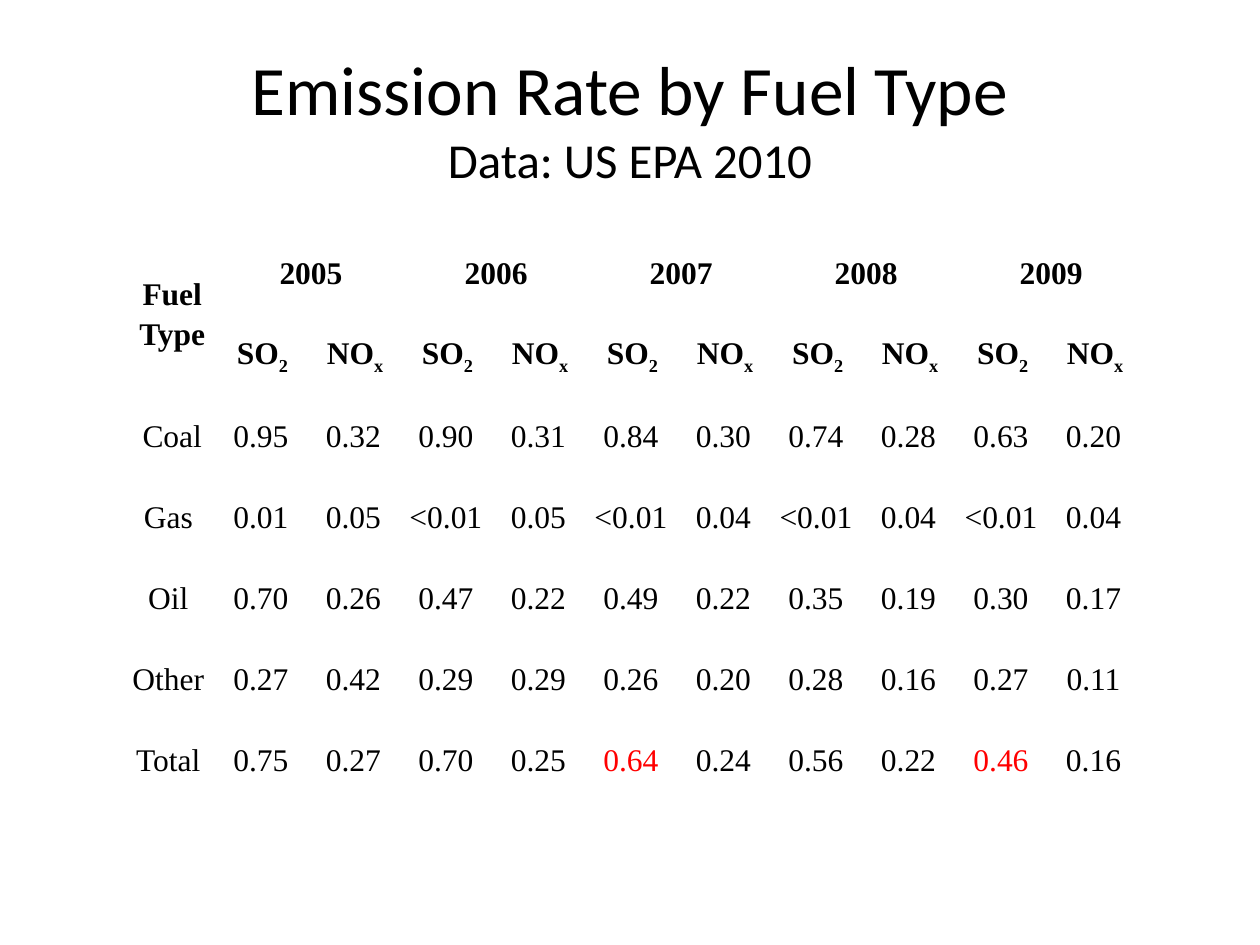
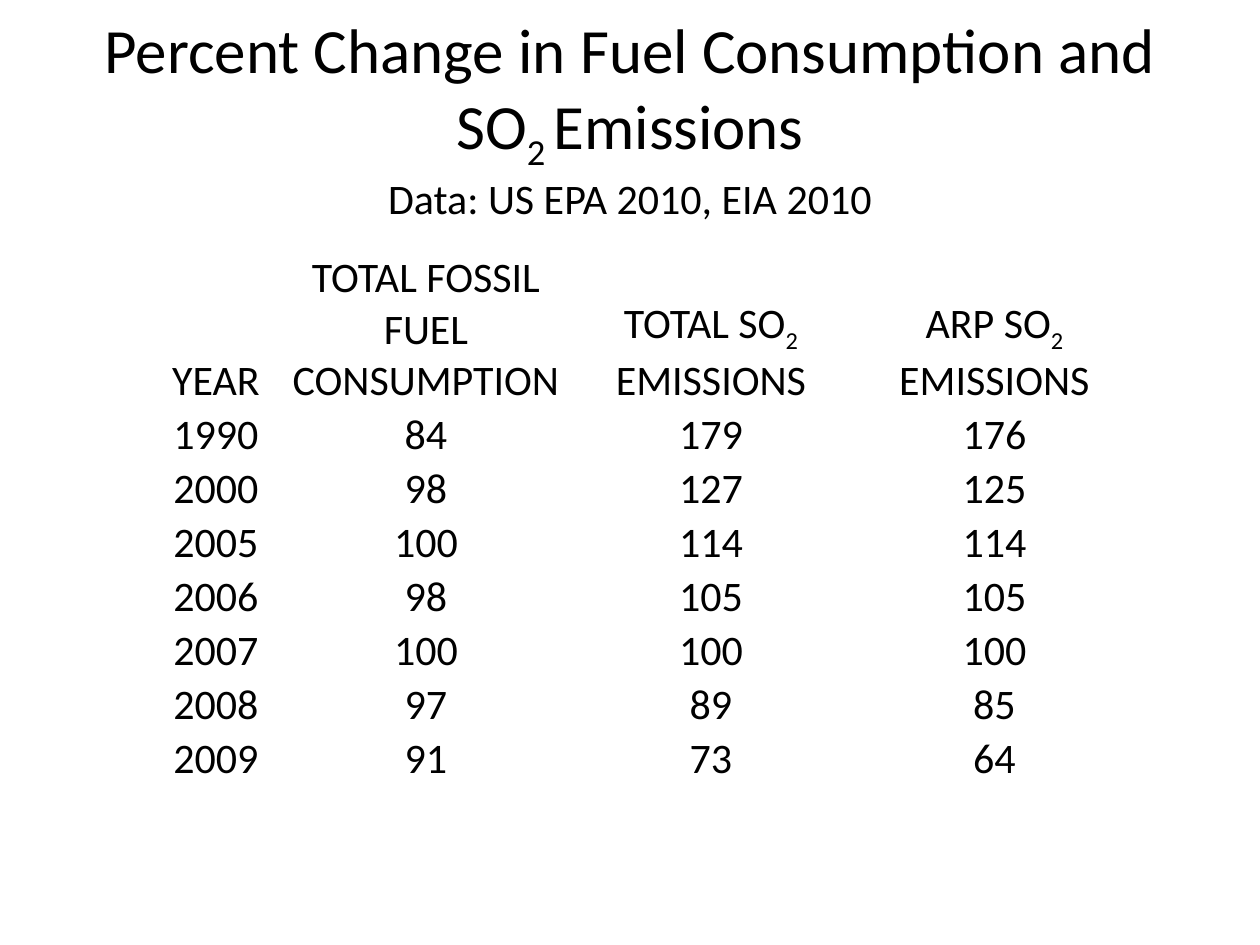
from lxml.etree import SubElement
from pptx import Presentation
from pptx.dml.color import RGBColor
from pptx.enum.text import MSO_ANCHOR, MSO_AUTO_SIZE, PP_ALIGN
from pptx.oxml.ns import qn
from pptx.util import Emu, Pt

COLORS = {"text": "000000", "alert": "FF0000"}
SANS, SERIF = "Calibri", "Times New Roman"
PAGE = (1260, 945)
TITLE = (63, 38, 1134, 158)

YEARS = ["2005", "2006", "2007", "2008", "2009"]
RATES = {
    "Coal": "0.95 0.32 0.90 0.31 0.84 0.30 0.74 0.28 0.63 0.20",
    "Gas ": "0.01 0.05 <0.01 0.05 <0.01 0.04 <0.01 0.04 <0.01 0.04",
    "Oil ": "0.70 0.26 0.47 0.22 0.49 0.22 0.35 0.19 0.30 0.17",
    "Other ": "0.27 0.42 0.29 0.29 0.26 0.20 0.28 0.16 0.27 0.11",
    "Total ": "0.75 0.27 0.70 0.25 0.64 0.24 0.56 0.22 0.46 0.16",
}
ALERTS = {(6, 5), (6, 9)}
HEADS = ["YEAR", "", "TOTAL FOSSIL FUEL CONSUMPTION",
         "TOTAL SO_2_ EMISSIONS", "ARP SO_2_ EMISSIONS"]
CHANGES = [
    (1990, 84, 179, 176),
    (2000, 98, 127, 125),
    (2005, 100, 114, 114),
    (2006, 98, 105, 105),
    (2007, 100, 100, 100),
    (2008, 97, 89, 85),
    (2009, 91, 73, 64),
]


def px(num):
    """Turn pixels into EMU."""
    return Emu(round(num * 914400 / 126))


def write(para, text, size, face=SANS, bold=False, color="text"):
    """Add runs to a centred paragraph; text between underscores is subscript."""
    para.alignment = PP_ALIGN.CENTER
    for idx, part in enumerate(text.split("_")):
        if not part:
            continue
        run = para.add_run()
        run.text = part
        font = run.font
        font.name, font.size, font.bold = face, Pt(size), bold
        font.color.rgb = RGBColor.from_string(COLORS[color])
        if idx % 2:
            run._r.get_or_add_rPr().set("baseline", "-25000")


def start(deck, box, head, size, note, small):
    """Add a slide whose title has a heading line and a smaller source line."""
    slide = deck.slides.add_slide(deck.slide_layouts[5])
    title = slide.shapes.title
    title.left, title.top, title.width, title.height = map(px, box)
    frame = title.text_frame
    frame.auto_size = MSO_AUTO_SIZE.NONE
    frame.vertical_anchor = MSO_ANCHOR.MIDDLE
    para = frame.paragraphs[0]
    write(para, head, size)
    para.add_line_break()
    SubElement(para._p[-1], qn("a:rPr"), sz=str(round(size * 100)))
    write(para, note, small)
    return slide


def grid(slide, box, cols, rows, anchor, foot):
    """Add a plain table with the given column widths and row heights."""
    table = slide.shapes.add_table(len(rows), len(cols), *map(px, box)).table
    table.first_row = table.horz_banding = False
    for col, width in zip(table.columns, cols):
        col.width = px(width)
    for row, height in zip(table.rows, rows):
        row.height = px(height)
    for cell in table.iter_cells():
        cell.fill.background()
        cell.vertical_anchor = anchor
        cell.margin_left = cell.margin_right = cell.margin_top = px(1)
        cell.margin_bottom = px(foot)
    return table


def rates(slide, box):
    """Fill the box with emission rates by fuel and year."""
    wide, high = box[2:]
    count, lines = 1 + 2 * len(YEARS), 2 + len(RATES)
    table = grid(slide, box, [wide / count] * count, [high / lines] * lines,
                 MSO_ANCHOR.MIDDLE, 1)

    def put(row, col, text, bold=False):
        """Write one cell in the serif face."""
        para = table.cell(row, col).text_frame.paragraphs[0]
        para.line_spacing = 1.15
        color = "alert" if (row, col) in ALERTS else "text"
        write(para, text, 18, SERIF, bold, color)

    table.cell(0, 0).merge(table.cell(1, 0))
    put(0, 0, "Fuel Type", True)
    for idx, year in enumerate(YEARS):
        col = 1 + 2 * idx
        table.cell(0, col).merge(table.cell(0, col + 1))
        put(0, col, year, True)
        put(1, col, "SO_2 ", True)
        put(1, col + 1, "NO_x ", True)
    for row, (fuel, nums) in enumerate(RATES.items(), 2):
        put(row, 0, fuel)
        for col, num in enumerate(nums.split(), 1):
            put(row, col, num + " ")


def changes(slide, box):
    """Fill the box with fuel use and emissions by year."""
    cols = [116, 10, 284, 286, 281]
    rows = [150] + [54] * len(CHANGES)
    table = grid(slide, box, cols, rows, MSO_ANCHOR.BOTTOM, 0)
    body = [[year, "", *nums] for year, *nums in CHANGES]
    for row, items in enumerate([HEADS] + body):
        for col, item in enumerate(items):
            write(table.cell(row, col).text_frame.paragraphs[0], str(item), 24)


def main():
    """Build both slides and save the deck."""
    deck = Presentation()
    deck.slide_width, deck.slide_height = map(px, PAGE)
    slide = start(deck, TITLE, "Emission Rate by Fuel Type", 39.6,
                  "Data: US EPA 2010", 27.9)
    rates(slide, (126, 231, 1018, 567))
    slide = start(deck, TITLE,
                  "Percent Change in Fuel Consumption and SO_2 _Emissions", 36,
                  "Data: US EPA 2010, EIA 2010", 24)
    changes(slide, (158, 252, 977, 528))
    deck.save("out.pptx")


if __name__ == "__main__":
    main()
